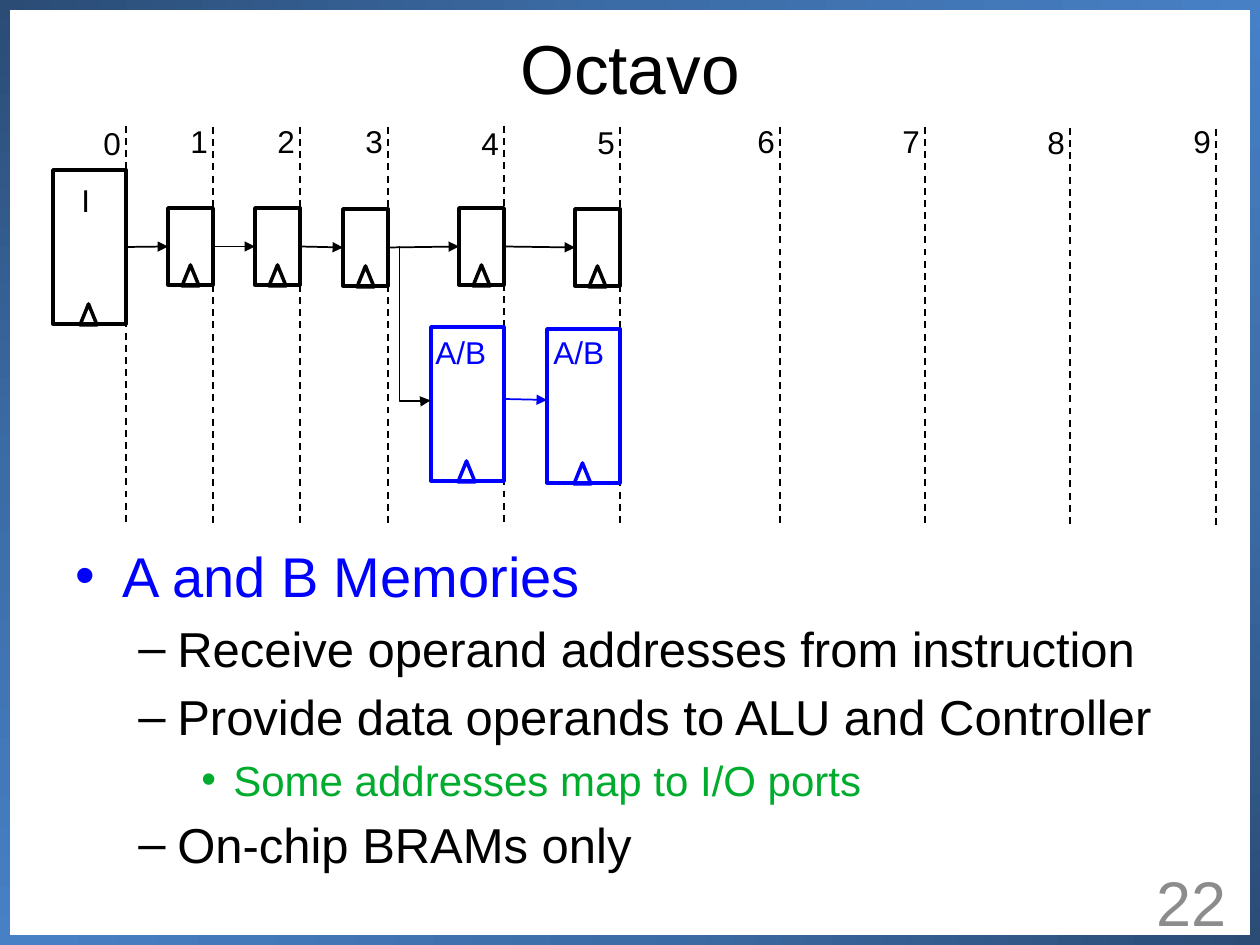
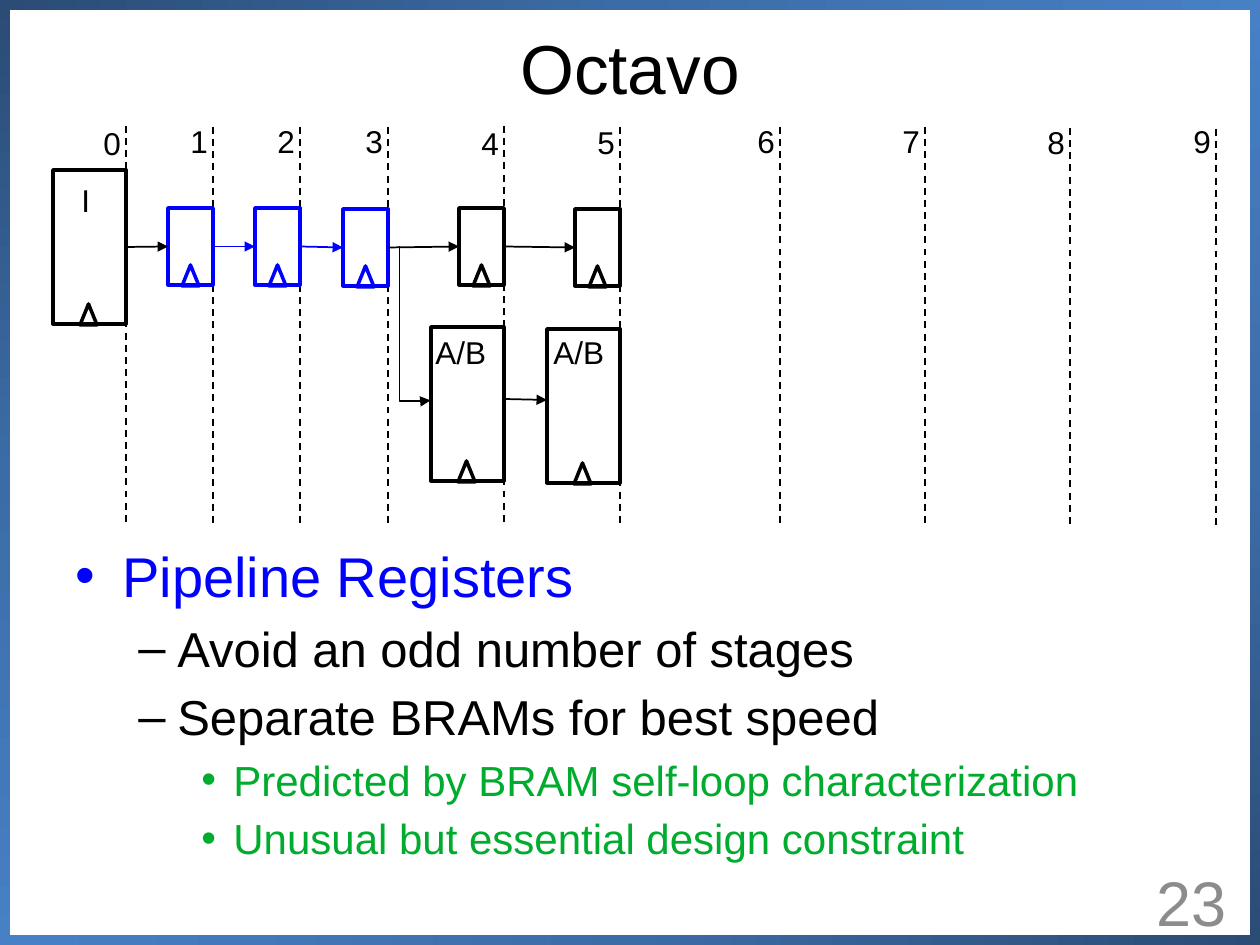
from pptx import Presentation
from pptx.dml.color import RGBColor
from pptx.enum.dml import MSO_LINE
from pptx.enum.shapes import MSO_CONNECTOR as LINK, MSO_SHAPE as SHAPE
from pptx.enum.text import MSO_ANCHOR as ANCHOR, MSO_AUTO_SIZE as FIT, PP_ALIGN as ALIGN
from pptx.oxml import parse_xml
from pptx.oxml.ns import nsdecls, qn
from pptx.util import Pt
from lxml.etree import SubElement

PX = 7257  # EMU in one pixel, 126 pixels to the inch
WIDTH, HEIGHT, BAND = 1260, 945, 10
BLACK, BLUE, GREEN, GREY = "000000", "0000FF", "00AC2D", "8C8C8C"
rgb = RGBColor.from_string

# Frame bands: box and gradient angle
BANDS = [
    ((0, 0, BAND, HEIGHT), 90),
    ((WIDTH - BAND, 0, BAND, HEIGHT), 270),
    ((0, HEIGHT - BAND, WIDTH, BAND), 180),
    ((0, 0, WIDTH, BAND), 0),
]
GRADIENT = [(0, "2A4C75"), (50, "3C6CA6"), (100, "4780C5")]

# Pipeline stages: x, top of the dashed line, top of the number
STAGES = [
    (126, 126, 118), (213, 127, 116), (300, 127, 116), (388, 127, 116), (504, 126, 118),
    (620, 127, 117), (780, 127, 116), (925, 127, 116), (1070, 128, 117), (1216, 129, 116),
]
STAGE_LENGTH = 400

# Block sizes: width, height, offset of the clock mark
MEMORY, REGISTER = (73, 154, 27), (45, 77, 14)
BLOCKS = {  # name: size, stage, top
    "I": (MEMORY, 0, 170),
    "R1": (REGISTER, 1, 208), "R2": (REGISTER, 2, 208), "R3": (REGISTER, 3, 209),
    "R4": (REGISTER, 4, 208), "R5": (REGISTER, 5, 209),
    "AB4": (MEMORY, 4, 327), "AB5": (MEMORY, 5, 329),
}
CHAIN = ["I", "R1", "R2", "R3", "R4", "R5"]
BLOCK_LABELS = [("I", "I", (69, 175, 34, 50)),
                ("AB4", "A/B", (423, 327, 77, 50)),
                ("AB5", "A/B", (541, 327, 77, 50))]

# Outline levels: size, colour, bullet, left margin and hanging indent
LEVELS = [(32, BLUE, "•", 47, 47), (28, BLACK, "–", 102, 39), (24, GREEN, "•", 158, 32)]

SLIDES = [
    ("22", {"AB4", "AB5"}, [
        (0, "A and B Memories"),
        (1, "Receive operand addresses from instruction"),
        (1, "Provide data operands to ALU and Controller"),
        (2, "Some addresses map to I/O ports"),
        (1, "On-chip BRAMs only"),
    ]),
    ("23", {"R1", "R2", "R3"}, [
        (0, "Pipeline Registers"),
        (1, "Avoid an odd number of stages"),
        (1, "Separate BRAMs for best speed"),
        (2, "Predicted by BRAM self-loop characterization"),
        (2, "Unusual but essential design constraint"),
    ]),
]
LABEL = {"word_wrap": False, "auto_size": FIT.SHAPE_TO_FIT_TEXT}
MIDDLE = {"word_wrap": True, "vertical_anchor": ANCHOR.MIDDLE}


def add_text(slide, box, lines, frame_format, align=ALIGN.LEFT):
    """Write lines of (text, size, colour) in a box and return its paragraphs."""
    frame = slide.shapes.add_textbox(*[v * PX for v in box]).text_frame
    for name, value in frame_format.items():
        setattr(frame, name, value)
    for number, (text, size, color) in enumerate(lines):
        paragraph = frame.add_paragraph() if number else frame.paragraphs[0]
        paragraph.alignment = align
        run = paragraph.add_run()
        run.text = text
        for name, value in {"name": "Arial", "size": Pt(size)}.items():
            setattr(run.font, name, value)
        run.font.color.rgb = rgb(color)
    return frame.paragraphs


def add_line(slide, ends, color, arrow=True, kind=LINK.STRAIGHT):
    """Draw a thin arrow, or a dashed line when arrow is False."""
    link = slide.shapes.add_connector(kind, *[v * PX for v in ends])
    link.line.width = Pt(1)
    link.line.color.rgb = rgb(color)
    if arrow:
        SubElement(link.line._get_or_add_ln(), qn("a:tailEnd"), type="triangle")
    else:
        link.line.dash_style = MSO_LINE.DASH
    SubElement(link._element.spPr, qn("a:effectLst"))
    return link


deck = Presentation()
deck.slide_width, deck.slide_height = WIDTH * PX, HEIGHT * PX

for page, highlighted, outline in SLIDES:
    slide = deck.slides.add_slide(deck.slide_layouts[6])
    colors = {name: BLUE if name in highlighted else BLACK for name in BLOCKS}

    # Gradient frame
    for box, angle in BANDS:
        band = slide.shapes.add_shape(SHAPE.RECTANGLE, *[v * PX for v in box])
        band.shadow.inherit = False
        band.line.fill.background()
        stops = "".join(f'<a:gs pos="{at * 1000}"><a:srgbClr val="{color}"/></a:gs>'
                        for at, color in GRADIENT)
        band._element.spPr.insert(2, parse_xml(
            f'<a:gradFill {nsdecls("a")} rotWithShape="1"><a:gsLst>{stops}</a:gsLst>'
            f'<a:lin ang="{angle * 60000}" scaled="0"/></a:gradFill>'))

    # Title and page number
    add_text(slide, (63, 38, 1134, 57), [("Octavo", 39.6, BLACK)], MIDDLE, ALIGN.CENTER)
    add_text(slide, (945, 876, 294, 50), [(page, 36, GREY)], MIDDLE, ALIGN.RIGHT)

    # Bulleted outline
    lines = [(text, *LEVELS[level][:2]) for level, text in outline]
    paragraphs = add_text(slide, (63, 535, 1134, 360), lines, {"word_wrap": True})
    for paragraph, (level, _) in zip(paragraphs, outline):
        bullet, margin, hanging = LEVELS[level][2:]
        paragraph.level = level
        props = paragraph._p.get_or_add_pPr()
        props.set("marL", str(margin * PX))
        props.set("indent", str(-hanging * PX))
        SubElement(SubElement(props, qn("a:spcBef")), qn("a:spcPct"), val="20000")
        SubElement(props, qn("a:buFont"), typeface="Arial")
        SubElement(props, qn("a:buChar"), char=bullet)

    # Stage lines and numbers
    for number, (x, top, label_top) in enumerate(STAGES):
        add_line(slide, (x, top, x, top + STAGE_LENGTH), BLACK, arrow=False)
        add_text(slide, (x - 35, label_top, 43, 50), [(str(number), 18, BLACK)], LABEL)

    # Memories and registers, each with its clock mark
    bodies = {}
    for name, ((width, height, offset), stage, top) in BLOCKS.items():
        left = STAGES[stage][0] - width
        block = slide.shapes.add_group_shape()
        bodies[name], clock = [
            block.shapes.add_shape(kind, *[v * PX for v in box]) for kind, box in (
                (SHAPE.RECTANGLE, (left, top, width, height)),
                (SHAPE.ISOSCELES_TRIANGLE, (left + offset, top + height - 20, 17, 21)))]
        for part in (bodies[name], clock):
            part.shadow.inherit = False
            part.fill.background()
            part.line.width = Pt(2)
            part.line.color.rgb = rgb(colors[name])

    # Arrows along the register chain
    for source, target in zip(CHAIN, CHAIN[1:]):
        color = BLUE if {source, target} <= highlighted else BLACK
        arrow = add_line(slide, (0, 0, 0, 0), color)
        arrow.begin_connect(bodies[source], 3)
        arrow.end_connect(bodies[target], 1)

    # Branch down to the A/B memories: an elbow turned to leave downwards
    branch = add_line(slide, (492, 308, 338, 339), BLACK, kind=LINK.ELBOW)
    branch._element.spPr.find(qn("a:xfrm")).set("rot", str(270 * 60000))
    bend = branch._element.spPr.find(qn("a:prstGeom")).find(qn("a:avLst"))
    SubElement(bend, qn("a:gd"), name="adj1", fmla="val 100600")
    add_line(slide, (504, 399, 547, 400), colors["AB4"])

    # Block labels
    for name, text, box in BLOCK_LABELS:
        add_text(slide, box, [(text, 18, colors[name])], LABEL)

deck.save("out.pptx")
